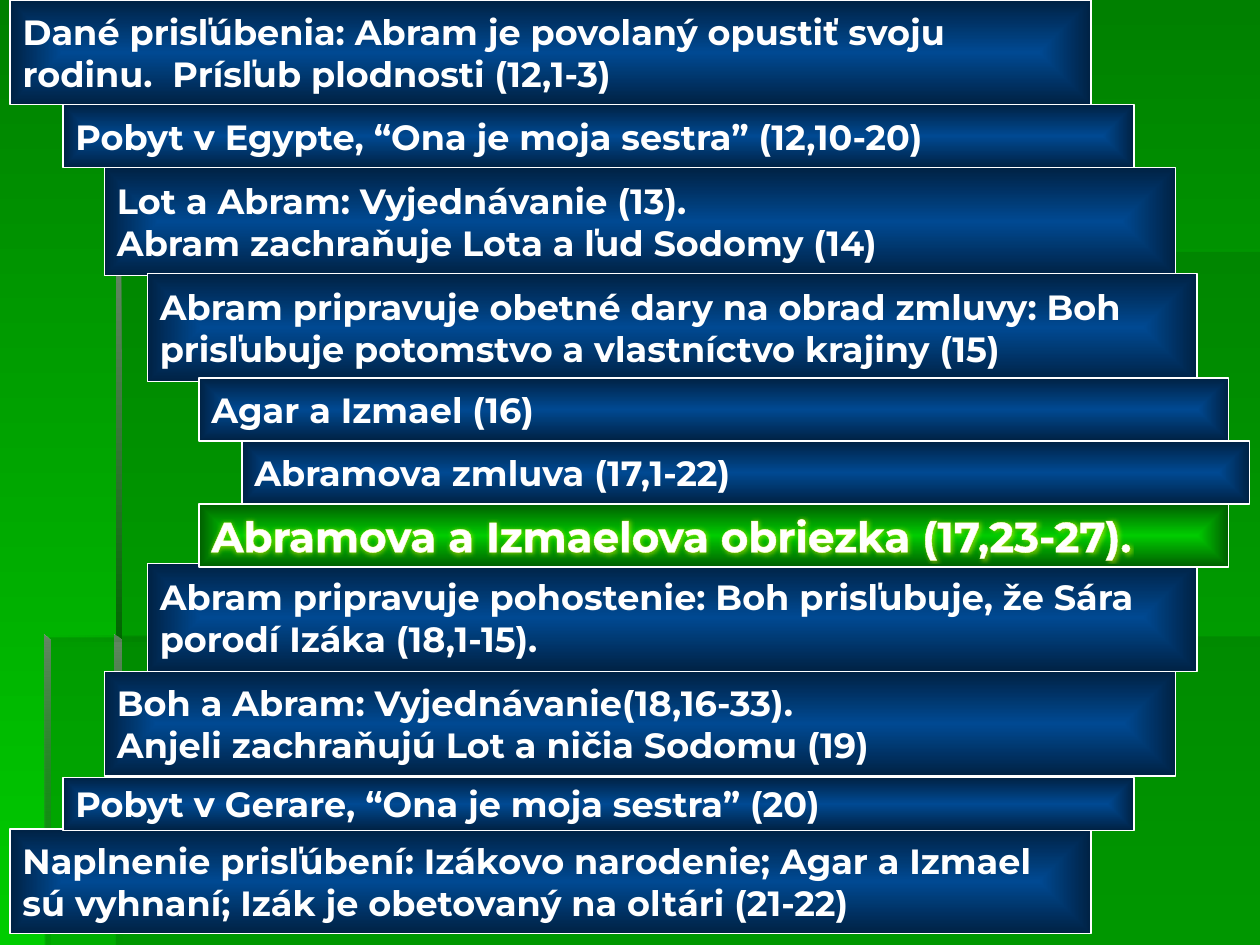
import pptx
import pptx.dml.color
import pptx.enum.text
import pptx.oxml
import pptx.oxml.ns
import pptx.util
from pptx.enum.shapes import MSO_SHAPE

Inches = pptx.util.Inches
Pt = pptx.util.Pt
RGB = pptx.dml.color.RGBColor
qn = pptx.oxml.ns.qn

FONT = "Montserrat"
WHITE = RGB(0xFF, 0xFF, 0xFF)
BLUE = RGB(0x00, 0x49, 0x92)
NAVY = RGB(0x00, 0x22, 0x44)
LIME = RGB(0x00, 0xCC, 0x00)
MOSS = RGB(0x00, 0x5E, 0x00)
GREEN = RGB(0x00, 0x80, 0x00)
DARK = RGB(0x00, 0x66, 0x00)
GREY = RGB(0x66, 0x86, 0x66)
CREAM = RGB(0xFF, 0xFF, 0xB7)
YELLOW = RGB(0xFF, 0xFF, 0x00)
NS = 'xmlns:a="http://schemas.openxmlformats.org/drawingml/2006/main"'

# left, top, width, height, text
BARS = [
    (0.08, 6.58, 8.58, 0.83, "Naplnenie prisľúbení: Izákovo narodenie; Agar a Izmael "
     "sú vyhnaní; Izák je obetovaný na oltári (21-22)"),
    (0.5, 0.83, 8.5, 0.5, "Pobyt v Egypte, “Ona je moja sestra” (12,10-20)"),
    (0.5, 6.17, 8.5, 0.42, "Pobyt v Gerare, “Ona je moja sestra” (20)"),
    (0.83, 1.33, 8.5, 0.86, "Lot a Abram: Vyjednávanie (13).\v"
     "Abram zachraňuje Lota a ľud Sodomy (14)"),
    (0.83, 5.33, 8.5, 0.83, "Boh a Abram: Vyjednávanie(18,16-33).\v"
     "Anjeli zachraňujú Lot a ničia Sodomu (19)"),
    (1.17, 2.17, 8.33, 0.86, "Abram pripravuje obetné dary na obrad zmluvy: Boh "
     "prisľubuje potomstvo a vlastníctvo krajiny (15)"),
    (1.17, 4.47, 8.33, 0.86, "Abram pripravuje pohostenie: Boh prisľubuje, že Sára "
     "porodí Izáka (18,1-15)."),
    (1.58, 3, 8.17, 0.5, "Agar a Izmael (16)"),
    (1.92, 3.5, 8, 0.5, "Abramova zmluva (17,1-22)"),
]
TITLE = (0.08, 0, 8.58, 0.83, "Dané prisľúbenia: Abram je povolaný opustiť svoju "
         "rodinu.  Prísľub plodnosti (12,1-3)")
FOCUS = (1.58, 4, 8.17, 0.5, "Abramova a Izmaelova obriezka (17,23-27).")

PANELS = [
    [(0.92, 5.05), (0.92, 7.5), (10, 7.5), (10, 5.05)],
    [(0.94, 5.06), (0.36, 5.06), (0.36, 7.5), (10, 7.5), (10, 2), (0.94, 2)],
]
# points, first colour and opacity, last colour and opacity, angle
EDGES = [
    ([(0.92, 2), (0.92, 2.05), (8.91, 2.05), (8.91, 2)], (DARK, 0), (MOSS, 100), 0),
    ([(0.92, 2), (0.92, 5.1), (0.97, 5.1), (0.96, 2.04)], (GREY, 100), (DARK, 100), 270),
    ([(0.91, 7.5), (0.97, 7.5), (0.96, 5.08), (0.91, 5.04)], (GREY, 100), (DARK, 0), 270),
    ([(0.35, 5.04), (0.35, 5.09), (5.35, 5.09), (5.35, 5.04)], (DARK, 0), (MOSS, 100), 0),
    ([(0.35, 5.04), (0.35, 7.5), (0.4, 7.5), (0.4, 5.09)], (GREY, 100), (DARK, 10), 270),
]


def blend(fill, first, last, angle=0):
    fill.gradient()
    fill.gradient_angle = angle
    for stop, color in zip(fill.gradient_stops, (first, last)):
        stop.color.rgb = color


def fade(shape, *levels):
    """Set the opacity, in percent, of each fill colour in turn."""
    for color, level in zip(shape._element.spPr.iter(qn("a:srgbClr")), levels):
        color.append(pptx.oxml.parse_xml(f'<a:alpha {NS} val="{level * 1000}"/>'))


def center(shape):
    """Let the gradient run from the middle of the shape to its edges."""
    lin = shape._element.spPr.find(qn("a:gradFill")).find(qn("a:lin"))
    rect = '<a:fillToRect l="50000" t="50000" r="50000" b="50000"/>'
    lin.getparent().replace(lin, pptx.oxml.parse_xml(
        f'<a:path {NS} path="shape">{rect}</a:path>'))


def outline(shapes, points):
    spots = [(Inches(x), Inches(y)) for x, y in points]
    pen = shapes.build_freeform(*spots[0])
    pen.add_line_segments(spots[1:], close=True)
    shape = pen.convert_to_shape()
    shape.shadow.inherit = False
    shape.line.fill.background()
    return shape


def backdrop(slide):
    blend(slide.background.fill, GREEN, LIME, 270)
    for points in PANELS:
        panel = outline(slide.shapes, points)
        panel.fill.solid()
        panel.fill.fore_color.rgb = DARK
        fade(panel, 30)
    for points, first, last, angle in EDGES:
        edge = outline(slide.shapes, points)
        blend(edge.fill, first[0], last[0], angle)
        fade(edge, first[1], last[1])


def style(shape, text, inner=BLUE, outer=NAVY, size=20):
    blend(shape.fill, inner, outer)
    center(shape)
    shape.line.color.rgb = WHITE
    shape.line.width = Pt(0.75)
    frame = shape.text_frame
    frame.text = text
    frame.word_wrap = True
    frame.auto_size = pptx.enum.text.MSO_AUTO_SIZE.NONE
    frame.vertical_anchor = pptx.enum.text.MSO_ANCHOR.MIDDLE
    para = frame.paragraphs[0]
    para.alignment = pptx.enum.text.PP_ALIGN.LEFT
    para.font.name = FONT
    para.font.size = Pt(size)
    para.font.bold = True
    para.font.color.rgb = WHITE


def add_bar(shapes, left, top, width, height, text, **look):
    bar = shapes.add_shape(MSO_SHAPE.RECTANGLE, *map(Inches, (left, top, width, height)))
    bar.shadow.inherit = False
    style(bar, text, **look)
    return bar


def glow(shape):
    """Give the text a thin pale outline and a yellow glow."""
    run = shape.text_frame.paragraphs[0].runs[0]
    run.font.color.rgb = WHITE
    props = run.font._element
    props.insert(0, pptx.oxml.parse_xml(
        f'<a:ln {NS} w="9525"><a:solidFill><a:srgbClr val="{CREAM}"/></a:solidFill></a:ln>'))
    props.append(pptx.oxml.parse_xml(
        f'<a:effectLst {NS}><a:glow rad="{Pt(5)}"><a:srgbClr val="{YELLOW}">'
        '<a:alpha val="40000"/></a:srgbClr></a:glow></a:effectLst>'))


def set_title(slide):
    title = slide.shapes.title
    slide.shapes._spTree.append(title._element)
    *place, text = TITLE
    title.left, title.top, title.width, title.height = map(Inches, place)
    style(title, text)


def main():
    deck = pptx.Presentation()
    deck.slide_width, deck.slide_height = Inches(10), Inches(7.5)
    slide = deck.slides.add_slide(deck.slide_layouts[5])
    backdrop(slide)
    set_title(slide)
    for bar in BARS:
        add_bar(slide.shapes, *bar)
    glow(add_bar(slide.shapes, *FOCUS, inner=LIME, outer=MOSS, size=24))
    deck.save("out.pptx")


if __name__ == "__main__":
    main()
